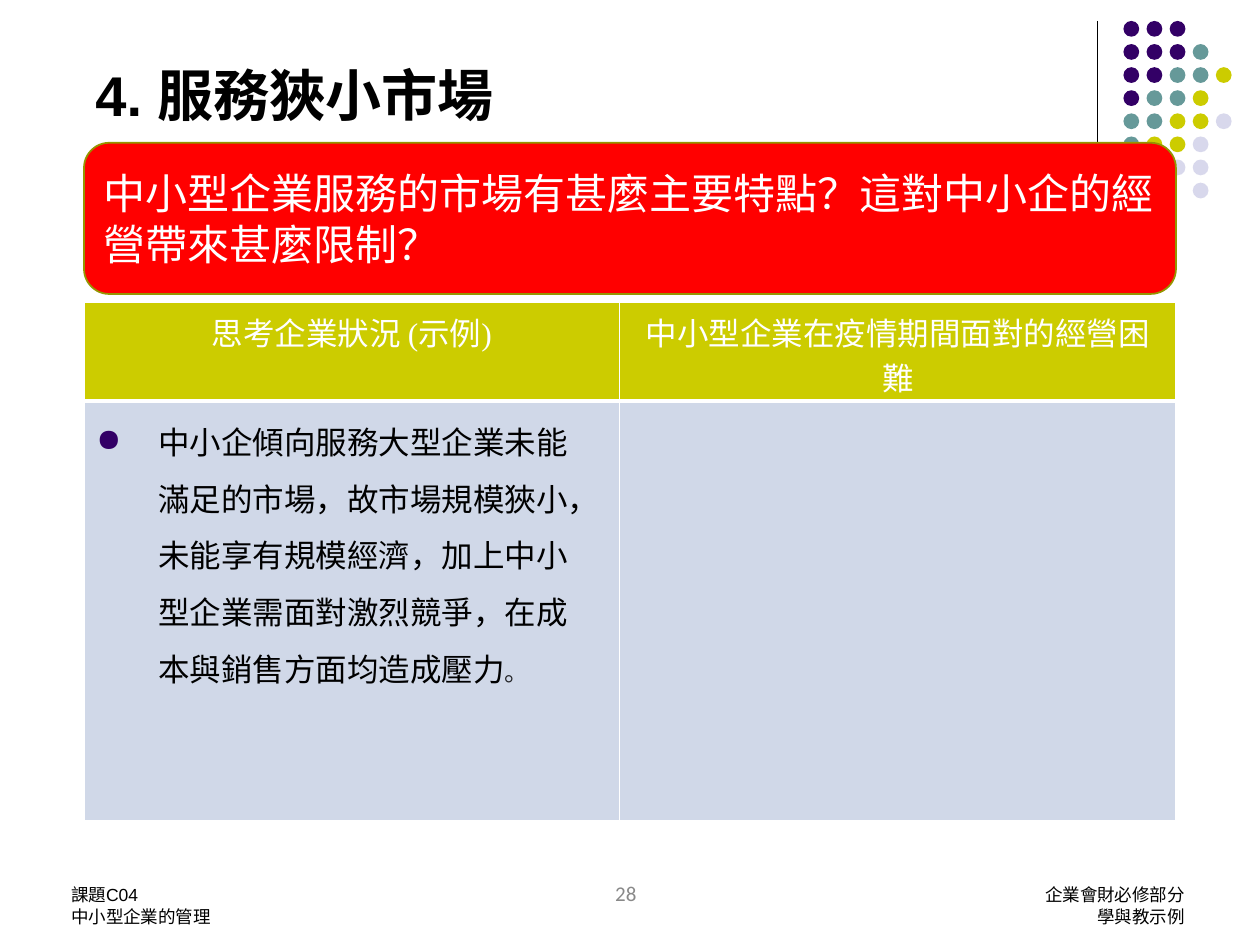
from dataclasses import dataclass

from lxml.etree import SubElement
from pptx import Presentation
from pptx.dml.color import RGBColor as Rgb
from pptx.enum.shapes import MSO_CONNECTOR as Link, MSO_SHAPE as Preset
from pptx.enum.text import MSO_ANCHOR as Anchor, PP_ALIGN as Align
from pptx.oxml import parse_xml
from pptx.oxml.ns import nsdecls, qn
from pptx.util import Inches, Pt

COLORS = {
    "black": "000000", "white": "FFFFFF", "purple": "330066", "teal": "669999",
    "lime": "CCCC00", "lilac": "D8D8EC", "red": "FF0000", "olive": "959500",
    "cell": "D0D8E8", "gray": "898989", "ink": "202124",
}
UNIT = 1 / 6  # the page is a grid of 60 columns by 45 rows
DOTS = ["PPP", "PPPT", "PPTTL", "PTTL", "TTLLV", "TLLV", "  VV", "   V"]
DOT_COLORS = {"P": "purple", "T": "teal", "L": "lime", "V": "lilac"}
DOT_SIZE, DOT_STEP = 0.75, 1.1


@dataclass(frozen=True)
class Area:
    col: float
    row: float
    cols: float
    rows: float

    def emu(self) -> list[int]:
        return [grid(n) for n in (self.col, self.row, self.cols, self.rows)]


@dataclass(frozen=True)
class Span:
    text: str
    size: float
    font: str = "Arial"
    color: str = "black"
    bold: bool = False


@dataclass(frozen=True)
class Label:
    area: Area
    lines: list[list[Span]]
    align: Align = Align.LEFT
    anchor: Anchor = Anchor.TOP
    top_inset: float = 0.05


def grid(units: float) -> int:
    return Inches(units * UNIT)


def rgb(name: str) -> Rgb:
    return Rgb.from_string(COLORS[name])


def paint(target, name: str) -> None:
    target.fill.solid()
    target.fill.fore_color.rgb = rgb(name)


def write(frame, lines: list[list[Span]], align: Align = Align.LEFT) -> None:
    frame.word_wrap = True
    for i, line in enumerate(lines):
        para = frame.paragraphs[0] if i == 0 else frame.add_paragraph()
        para.alignment = align
        for span in line:
            run = para.add_run()
            run.text = span.text
            run.font.size, run.font.name = Pt(span.size), span.font
            run.font.bold = span.bold
            run.font.color.rgb = rgb(span.color)


def add_label(page, label: Label):
    box = page.shapes.add_textbox(*label.area.emu())
    frame = box.text_frame
    frame.vertical_anchor = label.anchor
    frame.margin_top = Inches(label.top_inset)
    write(frame, label.lines, label.align)
    return box


def add_preset(page, kind: Preset, area: Area, color: str):
    shape = page.shapes.add_shape(kind, *area.emu())
    shape.shadow.inherit = False
    paint(shape, color)
    shape.line.fill.background()
    return shape


def add_ornament(page) -> None:
    rule = page.shapes.add_connector(
        Link.STRAIGHT, grid(52.25), grid(1), grid(52.25), grid(11))
    rule.line.color.rgb = rgb("black")
    rule.line.width = Pt(0.75)
    SubElement(rule._element.spPr, qn("a:effectLst"))
    for r, pattern in enumerate(DOTS):
        for c, key in enumerate(pattern):
            if key in DOT_COLORS:
                area = Area(53.5 + c * DOT_STEP, 1 + r * DOT_STEP, DOT_SIZE, DOT_SIZE)
                add_preset(page, Preset.OVAL, area, DOT_COLORS[key])


def set_borders(cell, widths: dict[str, float]) -> None:
    props = cell._tc.get_or_add_tcPr()
    for i, (side, width) in enumerate(widths.items()):
        props.insert(i, parse_xml(
            f'<a:ln{side} {nsdecls("a")} w="{Pt(width)}"><a:solidFill>'
            f'<a:srgbClr val="{COLORS["white"]}"/></a:solidFill></a:ln{side}>'))


def add_grid_table(page, area: Area, widths: list[float], heights: list[float],
                   headers: list[str]) -> None:
    table = page.shapes.add_table(len(heights), len(widths), *area.emu()).table
    for column, width in zip(table.columns, widths):
        column.width = grid(width)
    for r, height in enumerate(heights):
        table.rows[r].height = grid(height)
        for c in range(len(widths)):
            cell = table.cell(r, c)
            paint(cell, "cell" if r else "lime")
            set_borders(cell, {"L": 1, "R": 1, "T": 3 if r else 1, "B": 1 if r else 3})
            if r == 0:
                span = Span(headers[c], 18, "Times New Roman", "white")
                write(cell.text_frame, [[span]], Align.CENTER)


def set_indent(para, left: float, first: float = 0) -> None:
    props = para._p.get_or_add_pPr()
    props.set("marL", str(Inches(left)))
    props.set("indent", str(Inches(first)))


def add_bullet(para, char: str, color: str) -> None:
    props = para._p.get_or_add_pPr()
    SubElement(SubElement(props, qn("a:buClr")), qn("a:srgbClr")).set("val", COLORS[color])
    SubElement(props, qn("a:buChar")).set("char", char)


def main() -> None:
    deck = Presentation()
    deck.slide_width, deck.slide_height = grid(60), grid(45)
    page = deck.slides.add_slide(deck.slide_layouts[6])

    # Corner ornament and title
    add_ornament(page)
    title = add_label(page, Label(
        Area(3, -0.2, 54, 6.6), [[Span("4. 服務狹小市場", 32, bold=True)]],
        anchor=Anchor.BOTTOM))
    set_indent(title.text_frame.paragraphs[0], 0.16)

    # Table of business situations
    add_grid_table(page, Area(4, 14.4, 52, 24.7), [25.5, 26.5], [4.7, 20],
                   ["思考企業狀況 (示例)", "中小型企業在疫情期間面對的經營困難"])

    # Question banner
    banner = add_preset(page, Preset.ROUNDED_RECTANGLE, Area(4, 6.8, 52, 7.2), "red")
    banner.line.color.rgb = rgb("olive")
    banner.line.width = Pt(1)
    banner.text_frame.vertical_anchor = Anchor.MIDDLE
    write(banner.text_frame, [[Span(
        "中小型企業服務的市場有甚麼主要特點？這對中小企的經營帶來甚麼限制？",
        24, "Roboto", "white")]])

    # Bulleted example over the first column
    example = add_label(page, Label(Area(4, 18.95, 24.6, 14.2), [[
        Span("中小企傾向服務大型企業未能滿足的市場，故市場規模狹小，未能享有規模經濟，"
             "加上中小型企業需面對激烈競爭，在成本與銷售方面均造成壓力", 18),
        Span("。", 14, "Roboto", "ink")]]))
    para = example.text_frame.paragraphs[0]
    para.line_spacing = 1.5
    set_indent(para, 0.49, -0.49)
    add_bullet(para, "●", "purple")

    # Footer
    footer = [
        Label(Area(2.8, 40.8, 14, 3),
              [[Span("課題C04", 10)], [Span("中小型企業的管理", 10)]], top_inset=0.22),
        Label(Area(22.8, 41.65, 14, 3),
              [[Span("28", 12, "Calibri", "gray")]], Align.CENTER),
        Label(Area(34.75, 40.8, 22.25, 3),
              [[Span("企業會財必修部分", 10)], [Span("學與教示例", 10)]],
              Align.RIGHT, top_inset=0.22),
    ]
    for label in footer:
        add_label(page, label)

    deck.save("out.pptx")


if __name__ == "__main__":
    main()
